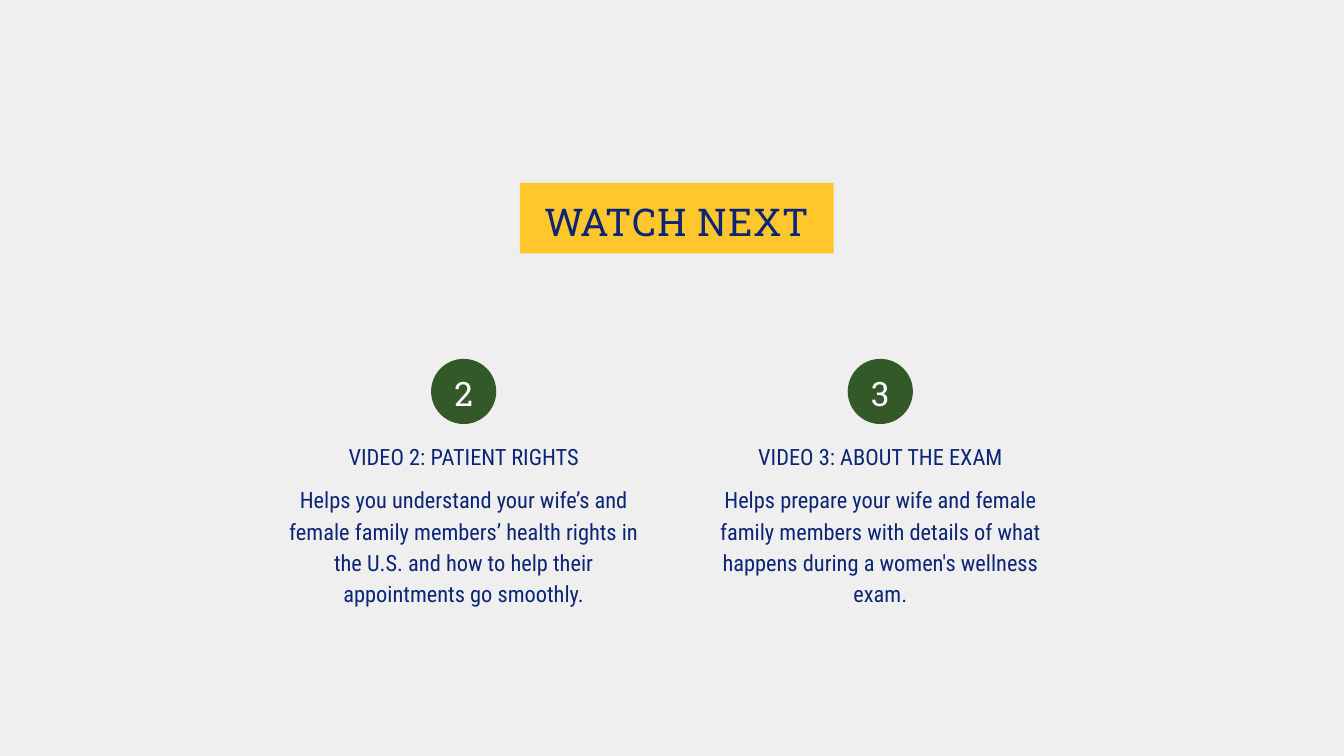
from pptx import Presentation
from pptx.dml.color import RGBColor
from pptx.enum.shapes import MSO_SHAPE
from pptx.enum.text import MSO_AUTO_SIZE, PP_ALIGN
from pptx.util import Inches, Pt

NAVY, GREEN, YELLOW, WHITE, GREY = "0C2675", "335929", "FFC72C", "FFFFFF", "EFEFEF"
SLAB, CONDENSED = "Roboto Slab", "Roboto Condensed"
LINE_HEIGHT = 1.4  # line spacing as a multiple of the text size


def paint(fill, color):
    fill.solid()
    fill.fore_color.rgb = RGBColor.from_string(color)


def add_label(center, top, width, height, text, size, font, color):
    box = page.shapes.add_textbox(
        Inches(center - width / 2), Inches(top), Inches(width), Inches(height))
    frame = box.text_frame
    frame.margin_left = frame.margin_right = frame.margin_top = frame.margin_bottom = 0
    frame.word_wrap = True
    frame.auto_size = MSO_AUTO_SIZE.SHAPE_TO_FIT_TEXT
    frame.text = text
    para = frame.paragraphs[0]
    para.alignment = PP_ALIGN.CENTER
    para.line_spacing = Pt(round(size * LINE_HEIGHT, 1))
    span = para.runs[0]
    span.font.size = Pt(size)
    span.font.name = font
    paint(span.font.fill, color)
    return span


deck = Presentation()
deck.slide_width, deck.slide_height = Inches(20), Inches(11.25)
page = deck.slides.add_slide(deck.slide_layouts[6])
paint(page.background.fill, GREY)

# Column grid: two video columns around the slide's middle
column_gap = 6.2
first_center = 6.9
column_width = 5.34
badge_size, badge_top = 0.97, 5.34
banner_center, banner_top, banner_width, banner_height = 10.07, 2.72, 4.67, 1.05

videos = [
    ("2", "VIDEO 2: PATIENT RIGHTS",
     "Helps you understand your wife’s and female family members’ health rights in "
     "the U.S. and how to help their appointments go smoothly."),
    ("3", "VIDEO 3: ABOUT THE EXAM",
     "Helps prepare your wife and female family members with details of what "
     "happens during a women's wellness exam."),
]

# Filled shapes: the title banner and one round badge per column
centers = [first_center + column * column_gap for column in range(len(videos))]
plates = [(MSO_SHAPE.RECTANGLE, banner_center, banner_top, banner_width, banner_height, YELLOW)]
plates += [(MSO_SHAPE.OVAL, center, badge_top, badge_size, badge_size, GREEN)
           for center in centers]
for kind, center, top, width, height, color in plates:
    plate = page.shapes.add_shape(
        kind, Inches(center - width / 2), Inches(top), Inches(width), Inches(height))
    plate.shadow.inherit = False
    plate.line.fill.background()
    paint(plate.fill, color)

# Title, with slightly open letter spacing
title = add_label(banner_center, 2.83, banner_width, 0.76, "WATCH NEXT", 41, SLAB, NAVY)
title.font._element.set("spc", "80")

# Badge number, heading and description of each video
for center, (number, heading, description) in zip(centers, videos):
    add_label(center, 5.45, 0.34, 0.66, number, 36, SLAB, WHITE)
    add_label(center, 6.52, column_width, 0.44, heading, 24, CONDENSED, NAVY)
    add_label(center, 7.17, column_width, 1.81, description, 24, CONDENSED, NAVY)

deck.save("out.pptx")
